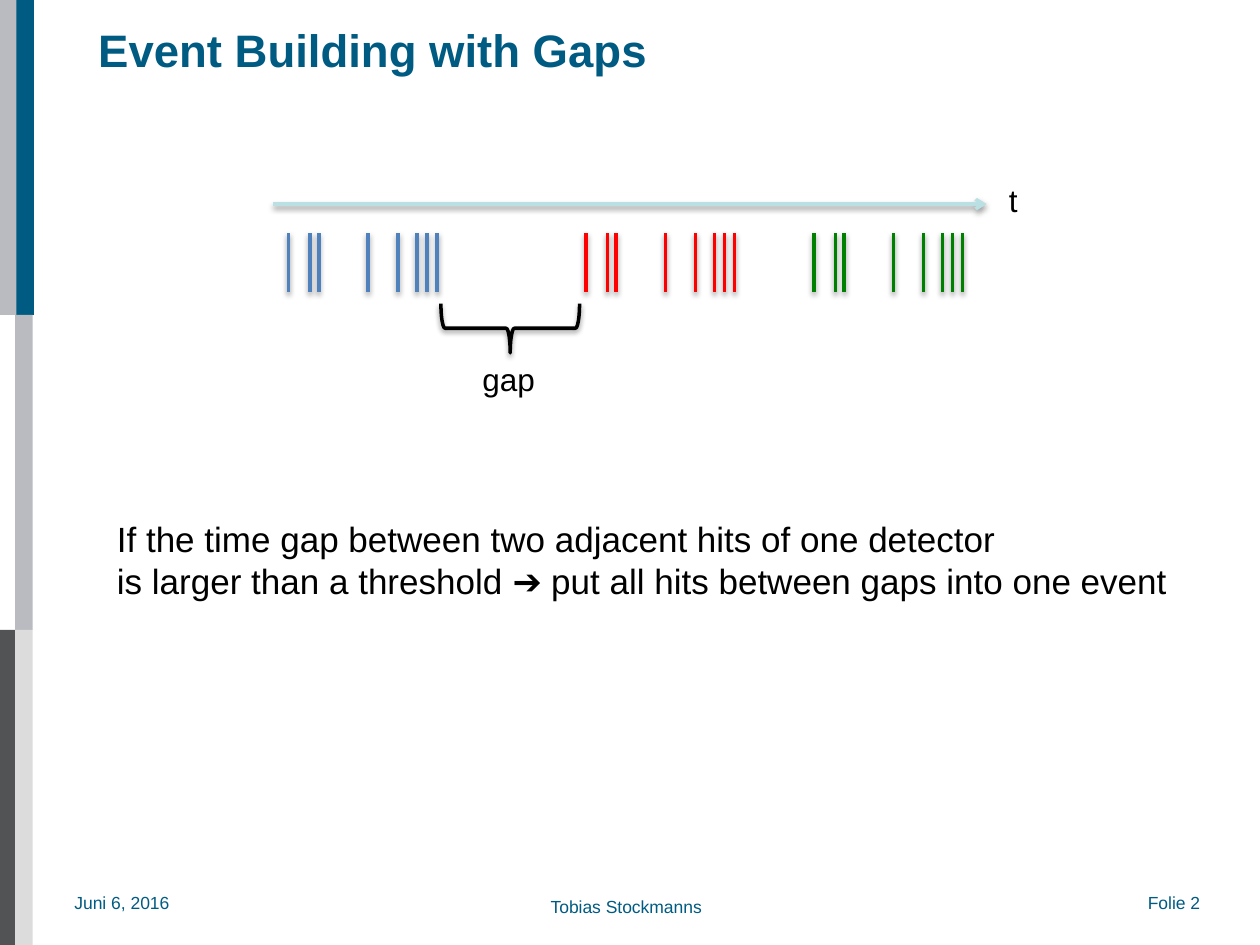
from dataclasses import dataclass

from lxml import etree
from pptx import Presentation
from pptx.dml.color import RGBColor
from pptx.enum import shapes, text
from pptx.oxml import parse_xml
from pptx.oxml.ns import nsdecls, qn
from pptx.util import Inches, Pt


@dataclass(frozen=True)
class Theme:
    font: str = "Arial"
    blue: str = "005B82"
    black: str = "000000"
    silver: str = "B9BBC0"
    slate: str = "515355"
    pale: str = "DCDCDC"
    axis: str = "BBE0E3"
    hits: tuple = ("4F81BD", "FF0000", "008000")
    title: int = 26
    body: int = 20
    label: int = 18
    foot: int = 10
    stroke: int = 2


THEME = Theme()
STARTS = (2.29, 4.65, 6.46)
STEPS = (0, 0.17, 0.24, 0.63, 0.87, 1.02, 1.1, 1.18)
SHADOW = f"""<a:effectLst {nsdecls('a')}>
  <a:outerShdw blurRad="{Pt(3.1)}" dist="{Pt(1.6)}" dir="5400000" rotWithShape="0">
    <a:srgbClr val="000000"><a:alpha val="38000"/></a:srgbClr>
  </a:outerShdw>
</a:effectLst>"""


def rgb(code):
    return RGBColor.from_string(code)


def assign(item, form):
    for name, value in form.items():
        setattr(item, name, value)


def write(slide, box, words, size, color=THEME.black, bold=False, **form):
    """Add a text box; form overrides its frame settings."""
    frame = slide.shapes.add_textbox(*map(Inches, box)).text_frame
    assign(frame, {"word_wrap": False,
                   "auto_size": text.MSO_AUTO_SIZE.SHAPE_TO_FIT_TEXT, **form})
    para = frame.paragraphs[0]
    para.text = words
    for run in para.runs:
        assign(run.font, {"name": THEME.font, "size": Pt(size), "bold": bold})
        run.font.color.rgb = rgb(color)


def flush():
    sides = ("left", "top", "right", "bottom")
    return {f"margin_{side}": 0 for side in sides}


def stroke(shape, color):
    """Give a shape or connector its line and soft shadow."""
    shape.line.color.rgb = rgb(color)
    shape.line.width = Pt(THEME.stroke)
    shape._element.spPr.append(parse_xml(SHADOW))


def rule(slide, start, end, color):
    ends = map(Inches, (*start, *end))
    line = slide.shapes.add_connector(shapes.MSO_CONNECTOR.STRAIGHT, *ends)
    stroke(line, color)
    return line


def sidebar(slide, left, top, width, height):
    part = height / 3
    bars = (
        (0, 0, THEME.silver), (0, 2, THEME.slate), (0.13, 0, THEME.blue),
        (0.12, 1, THEME.silver), (0.12, 2, THEME.pale),
    )
    for dx, row, color in bars:
        box = (left + dx, top + row * part, width, part)
        bar = slide.shapes.add_shape(
            shapes.MSO_SHAPE.RECTANGLE, *map(Inches, box))
        bar.shadow.inherit = False
        bar.fill.solid()
        bar.fill.fore_color.rgb = rgb(color)
        bar.line.fill.background()


def footer(slide, left, top, height):
    notes = (
        (0, 0, 0.85, "Juni 6, 2016"),
        (8.52, 0, 0.62, "Folie 2"),
        (3.78, 0.03, 1.26, "Tobias Stockmanns"),
    )
    for dx, dy, width, words in notes:
        write(slide, (left + dx, top + dy, width, height), words,
              THEME.foot, THEME.blue, **flush())


def heading(slide, box):
    write(slide, box, "Event Building with Gaps", THEME.title, THEME.blue,
          bold=True, word_wrap=True, auto_size=text.MSO_AUTO_SIZE.NONE,
          vertical_anchor=text.MSO_ANCHOR.MIDDLE, **flush())


def hits(slide, top, height):
    """Draw one group of hits per event, all with the same spacing."""
    for start, color in zip(STARTS, THEME.hits):
        for step in STEPS:
            x = start + step
            rule(slide, (x, top), (x, top + height), color)


def axis(slide, left, top, width):
    line = rule(slide, (left, top), (left + width, top), THEME.axis)
    stem = line._element.spPr.find(qn("a:ln"))
    etree.SubElement(stem, qn("a:tailEnd"), type="arrow")
    write(slide, (left + width + 0.08, top - 0.23, 0.27, 0.4), "t", THEME.label)


def gap(slide, left, top, width, height):
    """Draw a brace opening upwards, with its label below."""
    # The left brace is turned by 270 degrees about its centre.
    box = (left + (width - height) / 2, top + (height - width) / 2,
           height, width)
    brace = slide.shapes.add_shape(
        shapes.MSO_SHAPE.LEFT_BRACE, *map(Inches, box))
    brace.rotation = 270
    brace.fill.background()
    stroke(brace, THEME.black)
    write(slide, (left + width / 2 - 0.32, top + height + 0.01, 0.62, 0.4),
          "gap", THEME.label)


def main():
    deck = Presentation()
    assign(deck, {"slide_width": Inches(10), "slide_height": Inches(7.5)})
    slide = deck.slides.add_slide(deck.slide_layouts[6])
    sidebar(slide, 0, 0, 0.14, 7.5)
    footer(slide, 0.59, 7.08, 0.17)
    heading(slide, (0.78, 0.08, 7.27, 0.62))
    hits(slide, 1.85, 0.47)
    axis(slide, 2.17, 1.62, 5.66)
    write(slide, (0.83, 4.06, 8.67, 0.77),
          "If the time gap between two adjacent hits of one detector\v"
          "is larger than a threshold ➔ put all hits between gaps into one event",
          THEME.body)
    gap(slide, 3.5, 2.41, 1.1, 0.39)
    deck.save("out.pptx")


if __name__ == "__main__":
    main()
